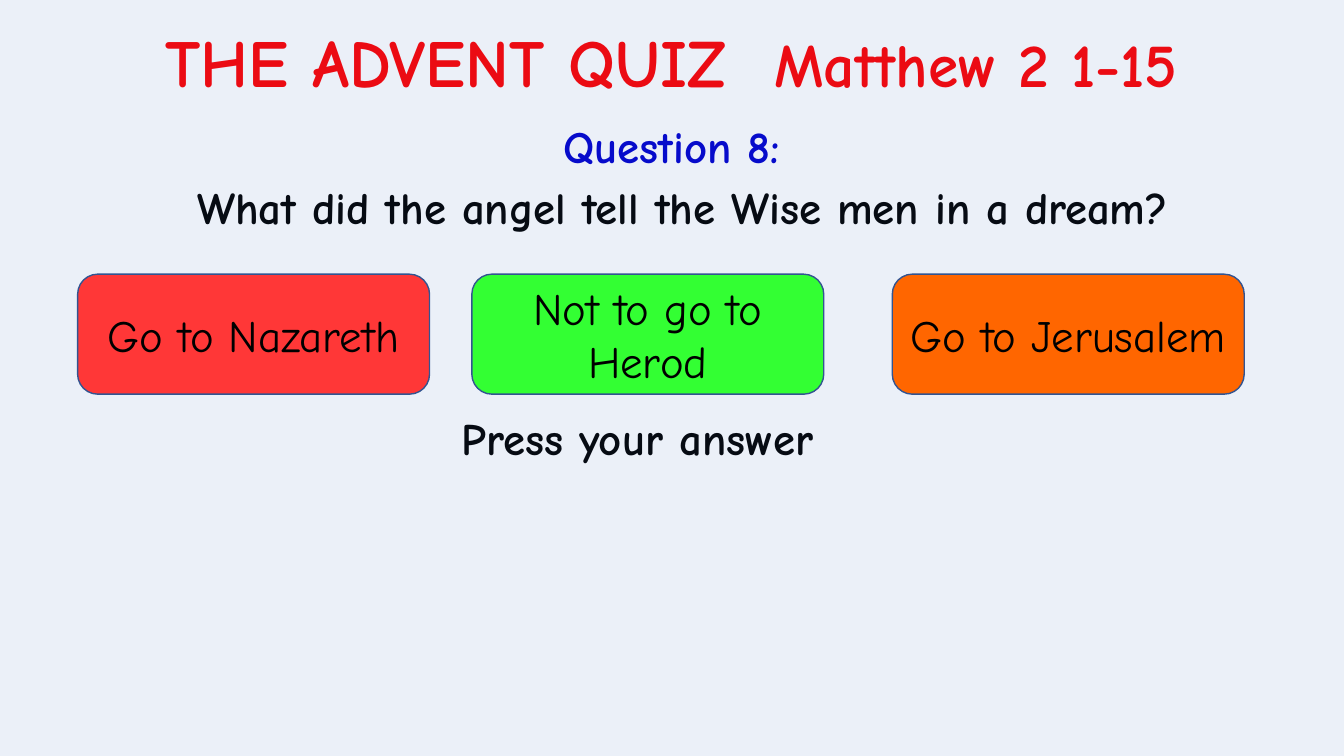
from lxml import etree
from pptx import Presentation
from pptx.dml.color import RGBColor
from pptx.enum.shapes import MSO_SHAPE as Shape
from pptx.enum.text import MSO_ANCHOR as Anchor, MSO_AUTO_SIZE as AutoSize, PP_ALIGN as Align
from pptx.oxml.ns import qn
from pptx.util import Inches, Pt

FONT = "Comic Neue"
RED = RGBColor(0xFF, 0x00, 0x00)
BLUE = RGBColor(0x00, 0x00, 0xCC)
BLACK = RGBColor(0x00, 0x00, 0x00)
WHITE = RGBColor(0xFF, 0xFF, 0xFF)
TINT = RGBColor(0x44, 0x72, 0xC4)
OUTLINE = RGBColor(0x32, 0x54, 0x91)
ANSWER_RED = RGBColor(0xFF, 0x37, 0x37)
ANSWER_GREEN = RGBColor(0x33, 0xFF, 0x33)
ANSWER_ORANGE = RGBColor(0xFF, 0x66, 0x00)

SLIDE_WIDTH, SLIDE_HEIGHT = 13.33, 7.5


def style_paragraph(paragraph, color, bold, align):
    paragraph.alignment = align
    paragraph.font.name = FONT
    paragraph.font.size = Pt(32)
    paragraph.font.bold = bold
    paragraph.font.color.rgb = color


def add_text(slide, box, text, color=BLACK, align=Align.CENTER):
    shape = slide.shapes.add_textbox(*map(Inches, box))
    shape.text_frame.word_wrap = True
    paragraph = shape.text_frame.paragraphs[0]
    paragraph.text = text
    style_paragraph(paragraph, color, True, align)
    return shape


def add_title(slide, box, parts):
    shape = add_text(slide, box, "", RED)
    shape.text_frame.word_wrap = False
    shape.text_frame.auto_size = AutoSize.SHAPE_TO_FIT_TEXT
    for text, size in parts:
        run = shape.text_frame.paragraphs[0].add_run()
        run.text = text
        run.font.size = Pt(size)


def add_box(slide, kind, box, fill):
    shape = slide.shapes.add_shape(kind, *map(Inches, box))
    shape.shadow.inherit = False
    shape.fill.solid()
    shape.fill.fore_color.rgb = fill
    shape.line.color.rgb = OUTLINE
    shape.line.width = Pt(1)
    return shape


def add_tint(slide, box):
    shape = add_box(slide, Shape.RECTANGLE, box, TINT)
    color = shape.fill._xPr.find(qn("a:solidFill"))[0]
    etree.SubElement(color, qn("a:alpha"), val="10000")


def add_answers(slide, box, answers):
    left, top, width, height = box
    for offset, text, fill in answers:
        shape = add_box(slide, Shape.ROUNDED_RECTANGLE, (left + offset, top, width, height), fill)
        frame = shape.text_frame
        frame.word_wrap = True
        frame.vertical_anchor = Anchor.MIDDLE
        frame.text = text
        style_paragraph(frame.paragraphs[0], BLACK, False, Align.CENTER)


def build_quiz_slide(presentation):
    slide = presentation.slides.add_slide(presentation.slide_layouts[6])
    slide.background.fill.solid()
    slide.background.fill.fore_color.rgb = WHITE

    add_title(slide, (0.37, 0.15, 12.58, 0.91),
              [("THE ADVENT QUIZ  ", 48), ("Matthew 2 1-15", 44)])

    question = add_text(slide, (0.99, 1.77, 11.57, 1.19),
                        "What did the angel tell the Wise men in a dream?")
    paragraph = question.text_frame.paragraphs[0]
    paragraph.line_spacing = Pt(36)
    paragraph.space_before = Pt(10)

    prompt = add_text(slide, (4.48, 4.09, 6.73, 0.72), "Press your answer", align=Align.LEFT)
    paragraph = prompt.text_frame.paragraphs[0]
    paragraph.line_spacing = 0.9
    paragraph.space_before = Pt(7.5)

    heading = add_text(slide, (4.46, 1.13, 4.41, 0.64), "Question 8:", BLUE)
    heading.text_frame.auto_size = AutoSize.SHAPE_TO_FIT_TEXT

    add_tint(slide, (-0.31, -0.61, 14.19, 8.73))
    add_answers(slide, (0.77, 2.72, 3.49, 1.19), [
        (0, "Go to Nazareth", ANSWER_RED),
        (3.91, "Not to go to Herod", ANSWER_GREEN),
        (8.08, "Go to Jerusalem", ANSWER_ORANGE),
    ])


def main():
    presentation = Presentation()
    presentation.slide_width = Inches(SLIDE_WIDTH)
    presentation.slide_height = Inches(SLIDE_HEIGHT)
    build_quiz_slide(presentation)
    presentation.save("out.pptx")


if __name__ == "__main__":
    main()
